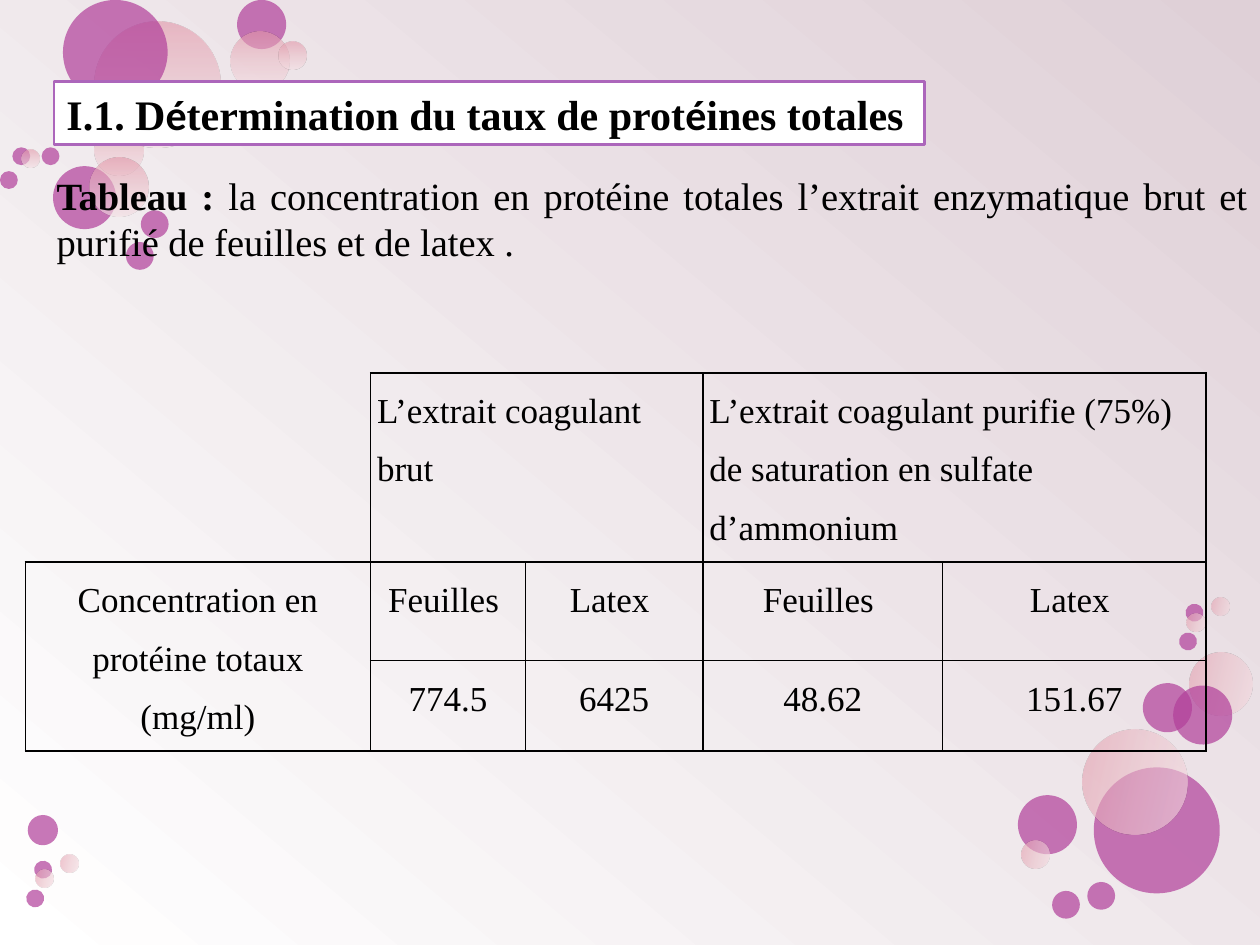
from copy import deepcopy

from lxml import etree
from pptx import Presentation
from pptx.dml.color import RGBColor
from pptx.enum.shapes import MSO_SHAPE
from pptx.enum.text import MSO_ANCHOR, MSO_AUTO_SIZE, PP_ALIGN
from pptx.oxml import parse_xml
from pptx.oxml.ns import qn
from pptx.util import Cm, Pt

OVAL, RECT = MSO_SHAPE.OVAL, MSO_SHAPE.RECTANGLE
MIDDLE = MSO_ANCHOR.MIDDLE
LEFT, CENTER, JUSTIFY = PP_ALIGN.LEFT, PP_ALIGN.CENTER, PP_ALIGN.JUSTIFY
GROW = MSO_AUTO_SIZE.SHAPE_TO_FIT_TEXT

BLACK = RGBColor(0x00, 0x00, 0x00)
WHITE = RGBColor(0xFF, 0xFF, 0xFF)
MAUVE = RGBColor(0xDF, 0xD0, 0xD7)
VIOLET = RGBColor(0xAC, 0x66, 0xBB)
PLUM = RGBColor(0xB1, 0x3F, 0x9A)
PINKS = [RGBColor(0xE2, 0x96, 0xA8), RGBColor(0xEB, 0xC0, 0xC9),
         RGBColor(0xF5, 0xE0, 0xE5)]
SERIF, SANS = "Times New Roman", "Calibri"
NS = 'xmlns:a="http://schemas.openxmlformats.org/drawingml/2006/main"'


def write(frame, text, size=20, font=SERIF, bold=False, align=LEFT, space=None):
    """Add a run to the first paragraph of a text frame."""
    para = frame.paragraphs[0]
    para.alignment = align
    if space:
        para.line_spacing = space
    run = para.add_run()
    run.text = text
    run.font.size = Pt(size)
    run.font.name = font
    run.font.bold = bold
    run.font.color.rgb = BLACK


deck = Presentation()
deck.slide_width, deck.slide_height = Cm(25.4), Cm(19.05)
slide = deck.slides.add_slide(deck.slide_layouts[6])
shapes = slide.shapes

# Background
back = slide.background.fill
back.gradient()
back.gradient_angle = 230
for stop, color in zip(back.gradient_stops, (MAUVE, WHITE)):
    stop.color.rgb = color

# Bubbles: left, top, diameter, pink or plum
upper = [
    (1.9, 0.43, 2.54, True), (1.07, 3.35, 1.27, False),
    (1.9, 2.54, 0.99, True), (1.8, 3.18, 1.19, True),
    (1.27, 0, 2.11, False), (4.78, 0, 0.99, False),
    (4.65, 0.64, 1.19, True), (5.61, 0.84, 0.56, True),
    (2.84, 4.24, 0.56, False), (0.25, 2.97, 0.36, False),
    (2.54, 4.88, 0.56, False), (0, 3.45, 0.36, False),
    (0.43, 3.02, 0.36, True), (0.84, 2.97, 0.36, False),
]
lower = [
    (22.05, 15.47, 2.54, False), (23.98, 13.16, 1.27, True),
    (23.04, 13.77, 0.99, False), (23.65, 13.82, 1.19, False),
    (21.82, 14.71, 2.11, True), (0.56, 16.43, 0.61, False),
    (20.52, 16.03, 1.19, False), (20.6, 16.94, 0.56, True),
    (21.21, 17.96, 0.56, False), (23.9, 12.17, 0.36, False),
    (21.92, 17.78, 0.56, False), (24.43, 12.04, 0.36, True),
    (23.93, 12.37, 0.36, True), (23.77, 12.75, 0.36, False),
    (0.69, 17.35, 0.36, False), (1.22, 17.22, 0.36, True),
    (0.71, 17.53, 0.36, True), (0.53, 17.93, 0.36, False),
]
for group, turned in ((upper, False), (lower, True)):
    for left, top, size, pink in group:
        ball = shapes.add_shape(OVAL, Cm(left), Cm(top), Cm(size), Cm(size))
        ball.shadow.inherit = False
        ball.line.fill.background()
        props = ball._element.spPr
        if turned:
            ball.rotation = 103.3
            props.find(qn("a:xfrm")).set("flipV", "1")
        if pink:
            ball.fill.gradient()
            ball.fill.gradient_angle = 270
            stops = props.find(".//" + qn("a:gsLst"))
            mid = deepcopy(stops[0])
            mid.set("pos", "50000")
            stops.insert(1, mid)
            for stop, color in zip(ball.fill.gradient_stops, PINKS):
                stop.color.rgb = color
        else:
            ball.fill.solid()
            ball.fill.fore_color.rgb = PLUM
        for tint in props.iter(qn("a:srgbClr")):
            alpha = etree.SubElement(tint, qn("a:alpha"))
            alpha.set("val", "60000" if pink else "70000")

# Heading
head = shapes.add_shape(RECT, Cm(1.09), Cm(1.65), Cm(17.55), Cm(1.27))
head.shadow.inherit = False
head.fill.solid()
head.fill.fore_color.rgb = WHITE
head.line.color.rgb = VIOLET
head.line.width = Pt(1.5)
frame = head.text_frame
frame.word_wrap = False
frame.auto_size = GROW
frame.vertical_anchor = MIDDLE
for text, font in (("I.1. D", SERIF), ("é", SANS),
                   ("termination du taux de prot", SERIF), ("é", SANS),
                   ("ines totales", SERIF)):
    write(frame, text, size=24, font=font, bold=True)

# Caption
note = shapes.add_textbox(Cm(0.89), Cm(3.33), Cm(24.51), Cm(2.13))
frame = note.text_frame
frame.word_wrap = True
frame.auto_size = GROW
frame.vertical_anchor = MIDDLE
write(frame, "Tableau : ", size=22, bold=True, align=JUSTIFY)
write(frame, "la concentration en protéine totales l’extrait enzymatique brut "
      "et purifié de feuilles et de latex .", size=22, align=JUSTIFY)

# Table
widths = [6.96, 3.12, 3.58, 4.83, 5.31]
heights = [3.81, 1.98, 1.83]
rows = [
    ["", "L’extrait coagulant brut", "",
     "L’extrait coagulant purifie (75%) de saturation en sulfate d’ammonium", ""],
    ["Concentration en protéine totaux (mg/ml)",
     "Feuilles ", "Latex ", "Feuilles ", "Latex "],
    ["", "774.5", "6425", "48.62", "151.67"],
]
holder = shapes.add_table(3, 5, Cm(0.51), Cm(7.52), Cm(sum(widths)), Cm(sum(heights)))
table = holder.table
table.first_row = table.horz_banding = False
for col, width in zip(table.columns, widths):
    col.width = Cm(width)
for row, height in zip(table.rows, heights):
    row.height = Cm(height)
for first, last in (((0, 1), (0, 2)), ((0, 3), (0, 4)), ((1, 0), (2, 0))):
    table.cell(*first).merge(table.cell(*last))

for r, line in enumerate(rows):
    for c, text in enumerate(line):
        cell = table.cell(r, c)
        cell.margin_left = cell.margin_right = Cm(0.18 if r else 0.13)
        cell.margin_top = cell.margin_bottom = 0
        corner = r == c == 0
        for side in "LRTB":
            if corner and side in "LT":
                paint = "<a:noFill/>"
            else:
                paint = f'<a:solidFill><a:srgbClr val="{BLACK}"/></a:solidFill>'
            cell._tc.get_or_add_tcPr().append(parse_xml(
                f'<a:ln{side} {NS} w="{Pt(1)}">{paint}</a:ln{side}>'))
        cell.fill.background()
        if text:
            write(cell.text_frame, text, align=CENTER if r else LEFT, space=1.5)

deck.save("out.pptx")
